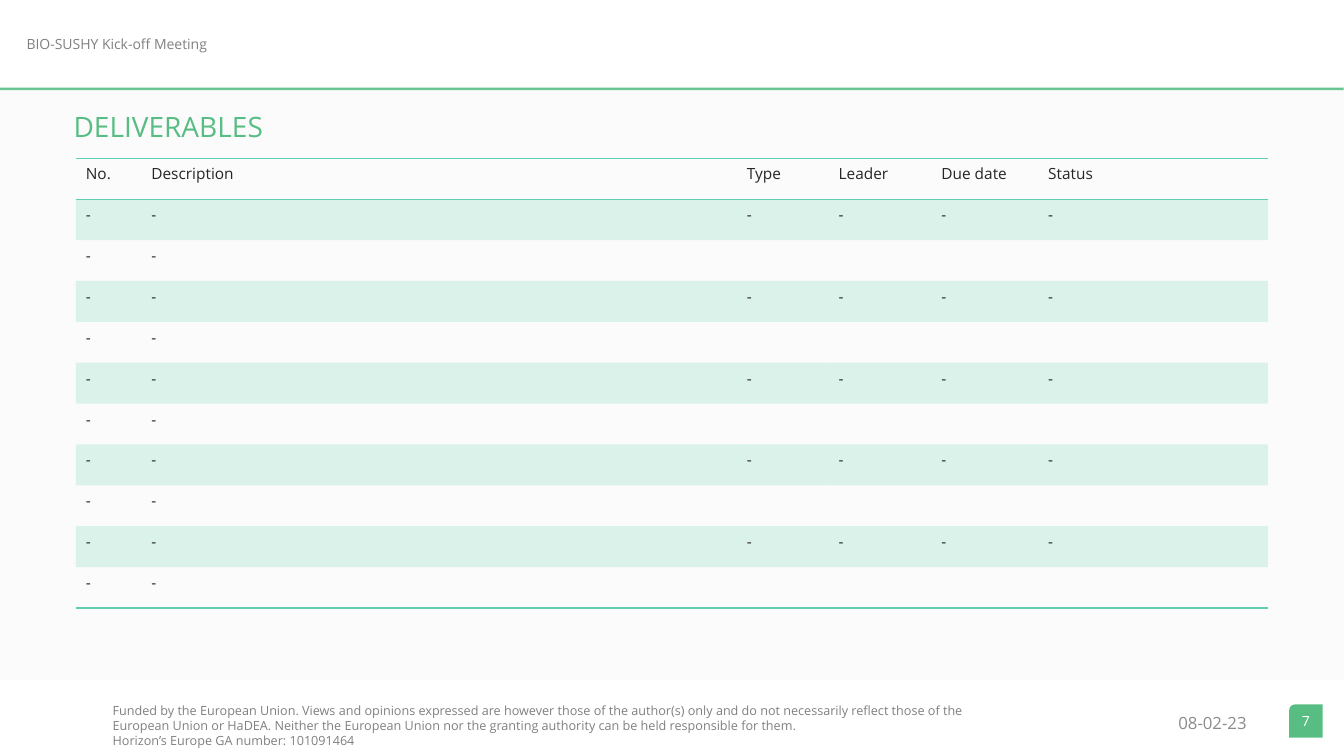
"""Build the deliverables slide of the kick-off meeting."""
import dataclasses

import pptx
import pptx.dml.color
import pptx.enum.shapes
import pptx.enum.text
import pptx.oxml
import pptx.oxml.ns
import pptx.util
from pptx.util import Cm

SHAPE = pptx.enum.shapes.MSO_SHAPE
ALIGN = pptx.enum.text.PP_ALIGN
ANCHOR = pptx.enum.text.MSO_ANCHOR
qn = pptx.oxml.ns.qn


@dataclasses.dataclass(frozen=True)
class Theme:
    """Colours, font and type sizes of the slide."""
    font: str = "Open Sans"
    green: str = "57BD83"
    mint: str = "5DCEAF"
    ink: str = "262626"
    grey: str = "808080"
    date_grey: str = "8C8C8C"
    panel: str = "D9D9D9"
    white: str = "FFFFFF"
    title: int = 20
    date: int = 12
    table: int = 11
    label: int = 10
    small: int = 9


THEME = Theme()
NO_GRID_STYLE = "{2D5ABB26-0587-4C30-8999-92F81FD0307C}"
COLUMNS = {"No.": 1.65, "Description": 15.01, "Type": 2.31,
           "Leader": 2.59, "Due date": 2.69, "Status": 5.79}
BODY_ROWS = 10
ROW_HEIGHT = 1.03
DISCLAIMER = (
    "Funded by the European Union. Views and opinions expressed are however those of the "
    "author(s) only and do not necessarily reflect those of the European Union or HaDEA. "
    "Neither the European Union nor the granting authority can be held responsible for them.")
GRANT = "Horizon’s Europe GA number: 101091464"


def rgb(colour):
    """Return a colour object for a hexadecimal string."""
    return pptx.dml.color.RGBColor.from_string(colour)


def set_alpha(properties, percent):
    """Make the solid fill of a properties element translucent."""
    colour = properties.find(qn("a:solidFill")).find(qn("a:srgbClr"))
    alpha = colour.makeelement(qn("a:alpha"), {"val": str(percent * 1000)})
    colour.append(alpha)


def add_run(paragraph, text, size, colour):
    """Add one formatted run to a paragraph."""
    run = paragraph.add_run()
    run.text = text
    run.font.name = THEME.font
    run.font.size = pptx.util.Pt(size)
    run.font.color.rgb = rgb(colour)


def write(shape, lines, size, colour, align=ALIGN.LEFT, anchor=ANCHOR.TOP):
    """Write lines into a shape, parted by line breaks."""
    frame = shape.text_frame
    frame.word_wrap = True
    frame.vertical_anchor = anchor
    paragraph = frame.paragraphs[0]
    paragraph.alignment = align
    for index, line in enumerate(lines):
        if index:
            paragraph.add_line_break()
        add_run(paragraph, line, size, colour)


def add_label(slide, box, lines, size, colour, **layout):
    """Add a text box at a box given in centimetres."""
    write(slide.shapes.add_textbox(*map(Cm, box)), lines, size, colour, **layout)


def add_block(slide, kind, box, colour):
    """Add a filled shape without outline or shadow."""
    shape = slide.shapes.add_shape(kind, *map(Cm, box))
    shape.shadow.inherit = False
    shape.fill.solid()
    shape.fill.fore_color.rgb = rgb(colour)
    shape.line.fill.background()
    return shape


def add_rule(slide, left, right, top):
    """Add the green rule below the header."""
    rule = slide.shapes.add_connector(
        pptx.enum.shapes.MSO_CONNECTOR.STRAIGHT, Cm(left), Cm(top), Cm(right), Cm(top))
    rule.line.color.rgb = rgb(THEME.green)
    rule.line.width = pptx.util.Pt(1.75)
    set_alpha(rule.get_or_add_ln(), 89)
    properties = rule.element.spPr
    properties.append(properties.makeelement(qn("a:effectLst"), {}))


def add_border(cell, side):
    """Draw a one-point border on the side lnT or lnB of a cell."""
    cell._tc.get_or_add_tcPr().append(pptx.oxml.parse_xml(
        f'<a:{side} {pptx.oxml.ns.nsdecls("a")} w="12700"><a:solidFill>'
        f'<a:srgbClr val="{THEME.mint}"/></a:solidFill></a:{side}>'))


def format_cell(cell, row):
    """Set the borders and the band of a cell according to its row."""
    if row == 0:
        add_border(cell, "lnT")
    if row in (0, BODY_ROWS):
        add_border(cell, "lnB")
    if row % 2:
        cell.fill.solid()
        cell.fill.fore_color.rgb = rgb(THEME.mint)
        set_alpha(cell._tc.get_or_add_tcPr(), 20)
    else:
        cell.fill.background()


def add_deliverables(slide, left, top):
    """Add the table, whose even body rows merge all but the first column."""
    rows, width = BODY_ROWS + 1, sum(COLUMNS.values())
    frame = slide.shapes.add_table(
        rows, len(COLUMNS), Cm(left), Cm(top), Cm(width), Cm(rows * ROW_HEIGHT))
    table = frame.table
    table.first_row = table.horz_banding = False
    for style in frame.element.iter(qn("a:tableStyleId")):
        style.text = NO_GRID_STYLE
    for column, column_width in zip(table.columns, COLUMNS.values()):
        column.width = Cm(column_width)
    for row in range(rows):
        table.rows[row].height = Cm(ROW_HEIGHT)
        if row and row % 2 == 0:
            table.cell(row, 1).merge(table.cell(row, len(COLUMNS) - 1))
        for index, heading in enumerate(COLUMNS):
            cell = table.cell(row, index)
            format_cell(cell, row)
            if not cell.is_spanned:
                text = "-" if row else heading
                add_run(cell.text_frame.paragraphs[0], text, THEME.table, THEME.ink)


def place_title(slide, box, text):
    """Move and format the title placeholder."""
    title = slide.shapes.title
    title.left, title.top, title.width, title.height = map(Cm, box)
    write(title, [text], THEME.title, THEME.green)
    title.text_frame.auto_size = pptx.enum.text.MSO_AUTO_SIZE.NONE
    return title


def main():
    """Build and save the slide."""
    presentation = pptx.Presentation()
    presentation.slide_width, presentation.slide_height = Cm(33.87), Cm(19.05)
    slide = presentation.slides.add_slide(presentation.slide_layouts[5])

    header = add_block(slide, SHAPE.RECTANGLE, (-0.03, 0.76, 9.7, 0.69), THEME.white)
    write(header, ["BIO-SUSHY Kick-off Meeting"], THEME.label, THEME.grey)
    header.text_frame.margin_left = Cm(0.7)
    add_label(slide, (24.18, 17.83, 7.49, 0.76), ["08-02-23"], THEME.date, THEME.date_grey,
              align=ALIGN.RIGHT, anchor=ANCHOR.MIDDLE)
    badge = add_block(slide, SHAPE.ROUND_1_RECTANGLE, (32.49, 17.75, 0.84, 0.84), THEME.green)
    badge.rotation = 270
    add_rule(slide, -0.05, 33.86, 2.24)
    add_label(slide, (2.59, 17.58, 22.73, 1.42), [DISCLAIMER, GRANT], THEME.small, THEME.grey)

    panel = add_block(slide, SHAPE.RECTANGLE, (0, 2.26, 33.87, 14.88), THEME.panel)
    set_alpha(panel.element.spPr, 10)
    title = place_title(slide, (1.6, 2.62, 7.59, 1.12), "DELIVERABLES")
    panel.element.addnext(title.element)
    add_deliverables(slide, 1.91, 3.99)
    add_label(slide, (32.49, 17.83, 0.84, 0.69), ["7"], THEME.label, THEME.white,
              align=ALIGN.CENTER)
    presentation.save("out.pptx")


if __name__ == "__main__":
    main()
